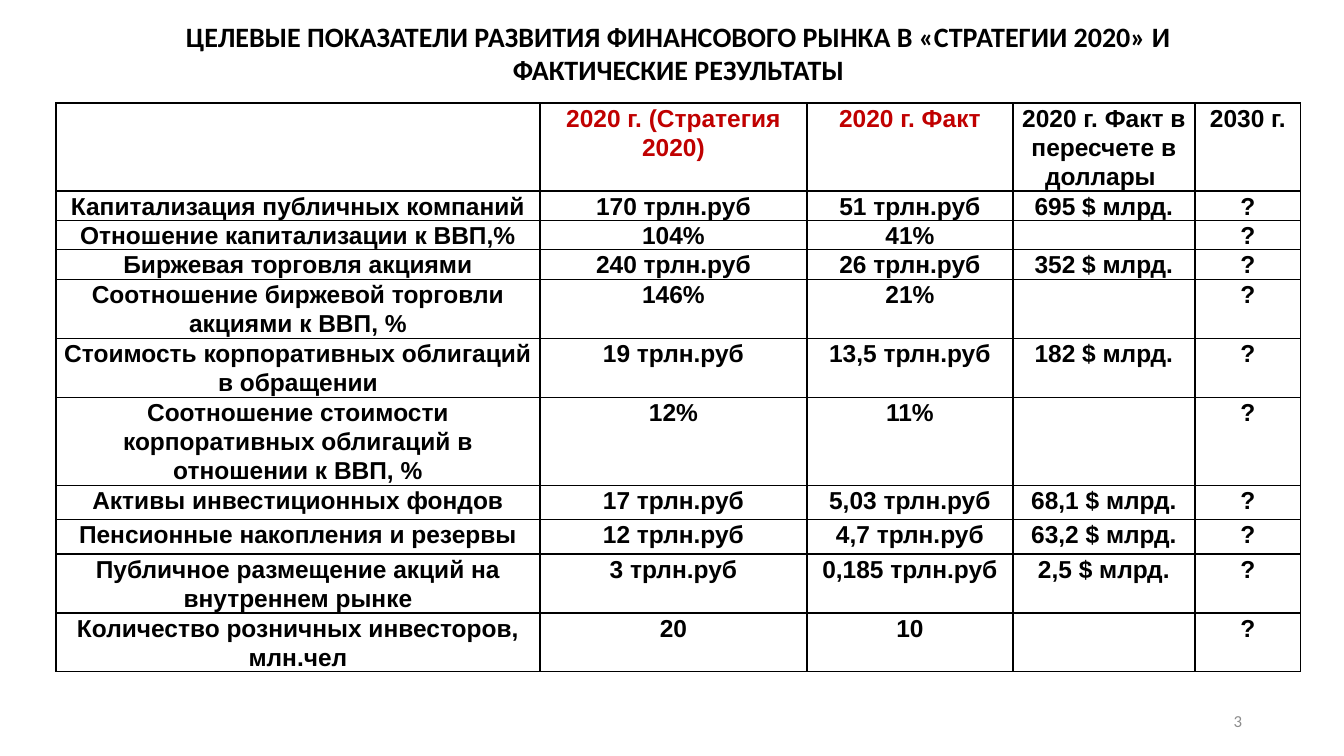
from lxml.etree import SubElement
from pptx import Presentation
from pptx.dml.color import RGBColor as Rgb
from pptx.enum.text import MSO_ANCHOR as Anchor, MSO_AUTO_SIZE as Fit, PP_ALIGN as Align
from pptx.oxml.ns import qn
from pptx.util import Pt

TITLE = "ЦЕЛЕВЫЕ ПОКАЗАТЕЛИ РАЗВИТИЯ ФИНАНСОВОГО РЫНКА В «СТРАТЕГИИ 2020» И ФАКТИЧЕСКИЕ РЕЗУЛЬТАТЫ"
NUMBER = "3"
HEAD = ["", "2020 г. (Стратегия 2020)", "2020 г. Факт", "2020 г. Факт в пересчете в доллары ", "2030 г."]
GOALS = [
    ("Капитализация публичных компаний", "170 трлн.руб", "51 трлн.руб", "695 $ млрд."),
    ("Отношение капитализации к ВВП,%", "104%", "41%", ""),
    ("Биржевая торговля акциями", "240 трлн.руб", "26 трлн.руб", "352 $ млрд."),
    ("Соотношение биржевой торговли акциями к ВВП, %", "146%", "21%", ""),
    ("Стоимость корпоративных облигаций в обращении", "19 трлн.руб", "13,5 трлн.руб", "182 $ млрд."),
    ("Соотношение стоимости корпоративных облигаций в отношении к ВВП, %", "12%", "11%", ""),
    ("Активы инвестиционных фондов", "17 трлн.руб", "5,03 трлн.руб", "68,1 $ млрд."),
    ("Пенсионные накопления и резервы", "12 трлн.руб", "4,7 трлн.руб", "63,2 $ млрд."),
    ("Публичное размещение акций на внутреннем рынке", "3 трлн.руб", "0,185 трлн.руб", "2,5 $ млрд."),
    ("Количество розничных инвесторов, млн.чел", "20", "10", ""),
]
ROWS = [HEAD] + [[*goal, "?"] for goal in GOALS]
COLS = [484, 267, 206, 182, 106]
HIGH = [88, 29, 29, 30, 58, 59, 88, 34, 35, 59, 58]
COLOR = {"ink": "000000", "red": "C00000", "gray": "8C8C8C"}
SIZE = 17.5


def px(n):
    return round(n * 914400 / 100.8)


def place(shape, *box):
    shape.left, shape.top, shape.width, shape.height = map(px, box)


def write(par, text, size, face, color, bold, align):
    par.alignment = align
    run = par.add_run()
    run.text = text
    font = run.font
    font.size, font.name, font.bold = Pt(size), face, bold
    font.color.rgb = Rgb.from_string(COLOR[color])


def border(cell):
    props = cell._tc.get_or_add_tcPr()
    for at, side in enumerate(("lnL", "lnR", "lnT", "lnB")):
        line = SubElement(props, qn(f"a:{side}"), w=str(Pt(1)))
        fill = SubElement(line, qn("a:solidFill"))
        SubElement(fill, qn("a:srgbClr"), val=COLOR["ink"])
        props.insert(at, line)


def fill_cell(cell, text, color):
    cell.fill.background()
    border(cell)
    cell.margin_left = cell.margin_right = px(7)
    cell.margin_top = cell.margin_bottom = 0
    par = cell.text_frame.paragraphs[0]
    if text:
        par.line_spacing, par.space_after = 1.07, Pt(8)
        write(par, text, SIZE, "Arial", color, True, Align.CENTER)
    else:
        SubElement(par._p, qn("a:endParaRPr"), sz="1000")


def add_goals(slide):
    frame = slide.shapes.add_table(len(ROWS), len(COLS), px(56), px(103), px(sum(COLS)), px(sum(HIGH)))
    table = frame.table
    table.first_row = table.horz_banding = False
    for col, wide in zip(table.columns, COLS):
        col.width = px(wide)
    for r, (row, high) in enumerate(zip(ROWS, HIGH)):
        table.rows[r].height = px(high)
        for c, text in enumerate(row):
            fill_cell(table.cell(r, c), text, "red" if r == 0 and c in (1, 2) else "ink")


def add_title(slide):
    title = slide.shapes.title
    place(title, 94, 14, 1169, 78)
    frame = title.text_frame
    frame.word_wrap, frame.auto_size = True, Fit.NONE
    frame.vertical_anchor = Anchor.TOP
    write(frame.paragraphs[0], TITLE, 20, "Calibri", "ink", True, Align.CENTER)


def add_number(slide):
    box = slide.shapes.add_textbox(px(950), px(701), px(302), px(40))
    frame = box.text_frame
    frame.word_wrap, frame.vertical_anchor = True, Anchor.MIDDLE
    write(frame.paragraphs[0], NUMBER, 12, "Calibri", "gray", False, Align.RIGHT)


def main():
    deck = Presentation()
    deck.slide_width, deck.slide_height = px(1344), px(756)
    slide = deck.slides.add_slide(deck.slide_layouts[5])
    add_goals(slide)
    add_number(slide)
    add_title(slide)
    deck.save("out.pptx")


if __name__ == "__main__":
    main()
